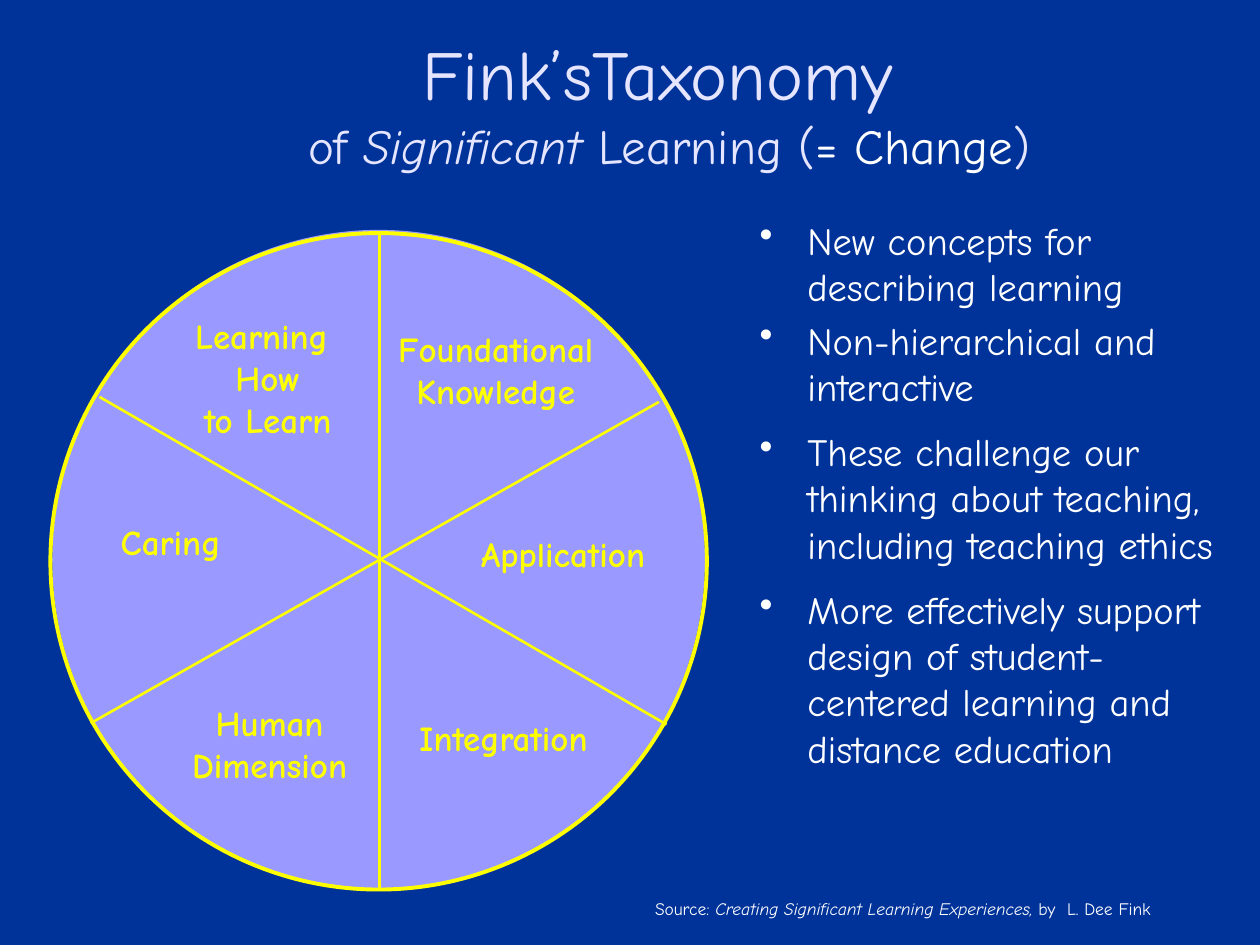
import pptx
import pptx.dml.color
import pptx.enum.shapes
import pptx.enum.text
import pptx.oxml.xmlchemy
import pptx.util
from pptx.util import Inches

COLORS = {
    "blue": "003399",
    "lavender": "9999FF",
    "yellow": "FFFF00",
    "pale": "E5E5FF",
    "white": "FFFFFF",
}
CENTER = pptx.enum.text.PP_ALIGN.CENTER
LEFT = pptx.enum.text.PP_ALIGN.LEFT


def color(name):
    return pptx.dml.color.RGBColor.from_string(COLORS[name])


class SlideBuilder:
    """Holds the font and the slide that elements are added to."""

    font_name = "Comic Neue"

    def __init__(self, slide):
        self.slide = slide

    def background(self, fill_color):
        fill = self.slide.background.fill
        fill.solid()
        fill.fore_color.rgb = color(fill_color)

    def ellipse(self, left, top, width, height, line_color, line_width, fill_color=None):
        shape = self.slide.shapes.add_shape(
            pptx.enum.shapes.MSO_SHAPE.OVAL,
            Inches(left), Inches(top), Inches(width), Inches(height))
        shape.shadow.inherit = False
        if fill_color:
            shape.fill.solid()
            shape.fill.fore_color.rgb = color(fill_color)
        else:
            shape.fill.background()
        shape.line.color.rgb = color(line_color)
        shape.line.width = pptx.util.Pt(line_width)

    def line(self, start, end, line_color, line_width):
        connector = self.slide.shapes.add_connector(
            pptx.enum.shapes.MSO_CONNECTOR.STRAIGHT,
            *(Inches(value) for value in start + end))
        connector.line.color.rgb = color(line_color)
        connector.line.width = pptx.util.Pt(line_width)
        properties = connector._element.spPr
        properties.append(pptx.oxml.xmlchemy.OxmlElement("a:effectLst"))

    def text_frame(self, left, top, width, height, wrap=True):
        """Adds an empty text box; without wrap it grows with its text."""
        box = self.slide.shapes.add_textbox(
            Inches(left), Inches(top), Inches(width), Inches(height))
        frame = box.text_frame
        frame.word_wrap = wrap
        if not wrap:
            frame.auto_size = pptx.enum.text.MSO_AUTO_SIZE.SHAPE_TO_FIT_TEXT
        return frame

    def paragraph(self, frame, index, alignment=LEFT):
        """Returns the first paragraph of the frame, or a new one after it."""
        paragraph = frame.add_paragraph() if index else frame.paragraphs[0]
        paragraph.alignment = alignment
        return paragraph

    def run(self, paragraph, text, size, font_color, bold=False, italic=False):
        run = paragraph.add_run()
        run.text = text
        run.font.name = self.font_name
        run.font.size = pptx.util.Pt(size)
        run.font.bold = bold
        run.font.italic = italic
        run.font.color.rgb = color(font_color)

    def title(self, box, heading, subtitle_runs):
        frame = self.text_frame(*box)
        frame.vertical_anchor = pptx.enum.text.MSO_ANCHOR.BOTTOM
        paragraph = self.paragraph(frame, 0, CENTER)
        paragraph.line_spacing = pptx.util.Pt(34)
        self.run(paragraph, heading, 40, "pale")
        paragraph.add_line_break()
        for text, font_color, italic in subtitle_runs:
            self.run(paragraph, text, 28, font_color, italic=italic)

    def bullets(self, box, items, size):
        """Adds a bulleted list of (text, space before in points)."""
        frame = self.text_frame(*box)
        for index, (text, space_before) in enumerate(items):
            paragraph = self.paragraph(frame, index)
            paragraph.space_before = pptx.util.Pt(space_before)
            self.run(paragraph, text, size, "white")
            properties = paragraph._p.get_or_add_pPr()
            properties.set("marL", str(Inches(0.38)))
            properties.set("indent", str(-Inches(0.38)))
            bullet = pptx.oxml.xmlchemy.OxmlElement("a:buChar")
            bullet.set("char", "•")
            properties.append(bullet)

    def label(self, box, paragraphs):
        """Adds a sector label; each paragraph is a list of its lines."""
        frame = self.text_frame(*box, wrap=False)
        alignment = CENTER if len(paragraphs) > 1 else LEFT
        for index, lines in enumerate(paragraphs):
            paragraph = self.paragraph(frame, index, alignment)
            for line_index, text in enumerate(lines):
                if line_index:
                    paragraph.add_line_break()
                self.run(paragraph, text, 20, "yellow", bold=True)

    def source_note(self, box, runs):
        paragraph = self.paragraph(self.text_frame(*box, wrap=False), 0)
        for text, italic in runs:
            self.run(paragraph, text, 10, "white", italic=italic)


def main():
    presentation = pptx.Presentation()
    presentation.slide_width = Inches(10)
    presentation.slide_height = Inches(7.5)
    builder = SlideBuilder(presentation.slides.add_slide(presentation.slide_layouts[6]))
    builder.background("blue")

    builder.title((1.25, 0.2, 8.12, 1.23), "Fink’sTaxonomy ", [
        ("of ", "pale", False),
        ("Significant ", "pale", True),
        ("Learning (", "pale", False),
        ("= Change", "white", False),
        (")", "pale", False),
    ])
    builder.bullets((5.93, 1.67, 3.84, 5.33), [
        ("New concepts for describing learning", 4.4),
        ("Non-hierarchical and interactive", 4.4),
        ("These challenge our thinking about teaching, including teaching ethics", 11),
        ("More effectively support design of student-centered learning "
         "and distance education", 11),
    ], 22)

    builder.ellipse(0.42, 1.83, 5.17, 5.23, "lavender", 0.75, "lavender")
    builder.ellipse(0.4, 1.85, 5.21, 5.21, "yellow", 2.25)
    sector_lines = [
        ((3.01, 1.85), (3.01, 7.07)),
        ((0.79, 3.15), (5.29, 5.75)),
        ((0.72, 5.74), (5.23, 3.19)),
    ]
    for start, end in sector_lines:
        builder.line(start, end, "yellow", 1.5)

    sector_labels = [
        ((2.96, 2.55, 1.95, 0.77), [["Foundational"], ["Knowledge"]]),
        ((3.72, 4.18, 1.71, 0.43), [["Application"]]),
        ((3.23, 5.64, 1.64, 0.43), [["Integration"]]),
        ((1.33, 5.52, 1.62, 0.77), [["Human"], ["Dimension"]]),
        ((0.86, 4.08, 1.08, 0.43), [["Caring"]]),
        ((1.4, 2.45, 1.45, 1.1), [["Learning ", "How"], ["to Learn"]]),
    ]
    for box, paragraphs in sector_labels:
        builder.label(box, paragraphs)

    builder.source_note((5.1, 7.08, 4.49, 0.27), [
        ("Source: ", False),
        ("Creating Significant Learning Experiences,", True),
        (" by  L. Dee Fink", False),
    ])
    presentation.save("out.pptx")


if __name__ == "__main__":
    main()
